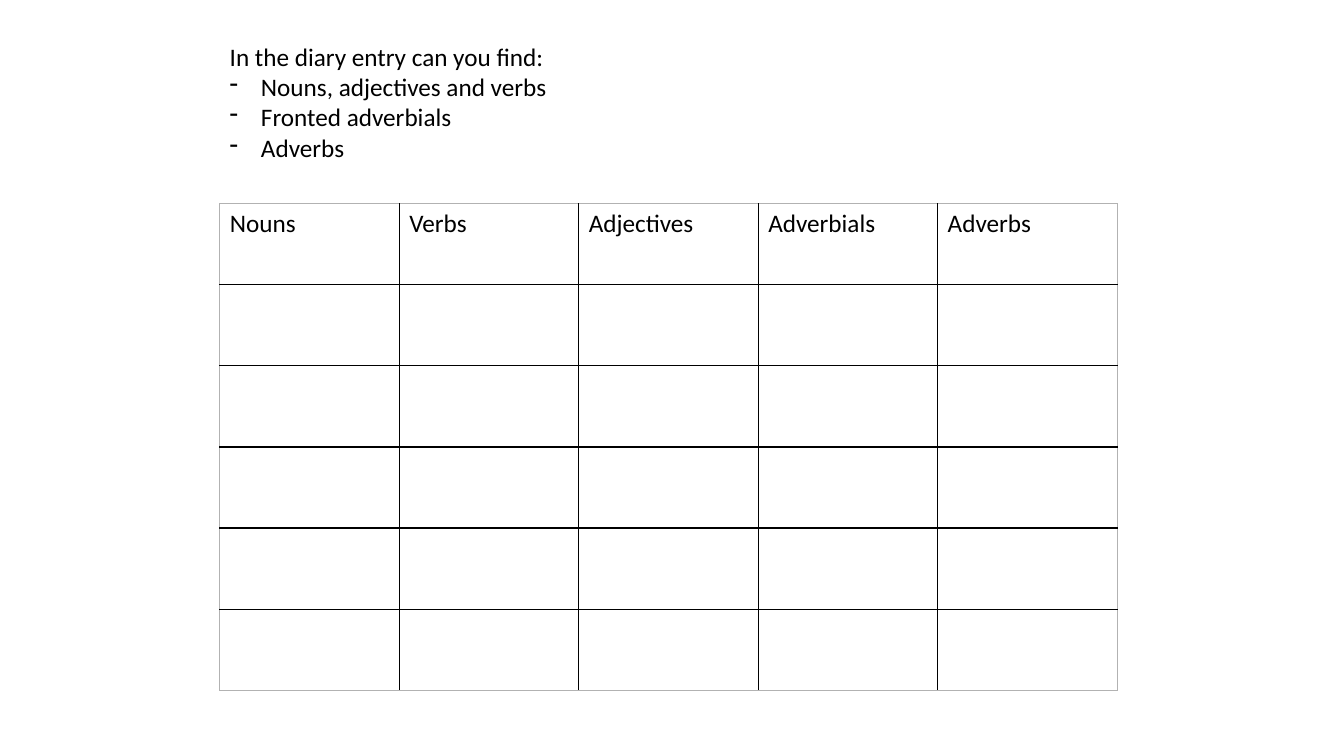
from lxml import etree
from pptx import Presentation
from pptx.dml.color import RGBColor
from pptx.enum.text import MSO_AUTO_SIZE
from pptx.oxml.ns import qn
from pptx.util import Inches, Pt

BLACK = RGBColor(0x00, 0x00, 0x00)
GREY = RGBColor(0xB2, 0xB2, 0xB2)
FONT = "Calibri"
TEXT_SIZE = Pt(18)
BORDER_WIDTH = Pt(1)
HANG = Inches(0.31)
FIT_SHAPE = MSO_AUTO_SIZE.SHAPE_TO_FIT_TEXT

SLIDE_WIDTH, SLIDE_HEIGHT = 13.33, 7.5
LEFT = 2.18
PROMPT_BOX = (LEFT, 0.36, 3.38, 1.31)
TABLE_BOX = (LEFT, 2.02, 8.9, 4.83)

QUESTION = "In the diary entry can you find:"
TARGETS = ["Nouns, adjectives and verbs", "Fronted adverbials", "Adverbs"]
HEADINGS = ["Nouns", "Verbs", "Adjectives", "Adverbials", "Adverbs"]
ROW_COUNT = 6


def write(para, text):
    para.text = text
    para.font.size = TEXT_SIZE
    for span in para.runs:
        span.font.name = FONT
        span.font.size = TEXT_SIZE
        span.font.bold = False
        span.font.color.rgb = BLACK


def add_dash(para):
    properties = para._p.get_or_add_pPr()
    properties.set("marL", str(HANG))
    properties.set("indent", str(-HANG))
    etree.SubElement(properties, qn("a:buFontTx"))
    etree.SubElement(properties, qn("a:buChar"), char="-")


def add_border(cell, side, color):
    properties = cell._tc.get_or_add_tcPr()
    line = etree.SubElement(properties, qn(f"a:ln{side}"), w=str(BORDER_WIDTH))
    fill = etree.SubElement(line, qn("a:solidFill"))
    etree.SubElement(fill, qn("a:srgbClr"), val=str(color))


def add_prompt(page, box):
    frame = page.shapes.add_textbox(*map(Inches, box)).text_frame
    frame.word_wrap = False
    frame.auto_size = FIT_SHAPE
    write(frame.paragraphs[0], QUESTION)
    for target in TARGETS:
        para = frame.add_paragraph()
        write(para, target)
        add_dash(para)


def add_word_table(page, box):
    left, top, width, height = map(Inches, box)
    column_count = len(HEADINGS)
    table = page.shapes.add_table(
        ROW_COUNT, column_count, left, top, width, height
    ).table
    table.first_row = False
    table.horz_banding = False
    for row in range(ROW_COUNT):
        for column in range(column_count):
            cell = table.cell(row, column)
            outer_edges = {
                "L": column == 0,
                "R": column == column_count - 1,
                "T": row == 0,
                "B": row == ROW_COUNT - 1,
            }
            for side, is_outer in outer_edges.items():
                add_border(cell, side, GREY if is_outer else BLACK)
            cell.fill.background()
            if row == 0:
                write(cell.text_frame.paragraphs[0], HEADINGS[column])


def main():
    deck = Presentation()
    deck.slide_width = Inches(SLIDE_WIDTH)
    deck.slide_height = Inches(SLIDE_HEIGHT)
    page = deck.slides.add_slide(deck.slide_layouts[6])
    add_prompt(page, PROMPT_BOX)
    add_word_table(page, TABLE_BOX)
    deck.save("out.pptx")


if __name__ == "__main__":
    main()
